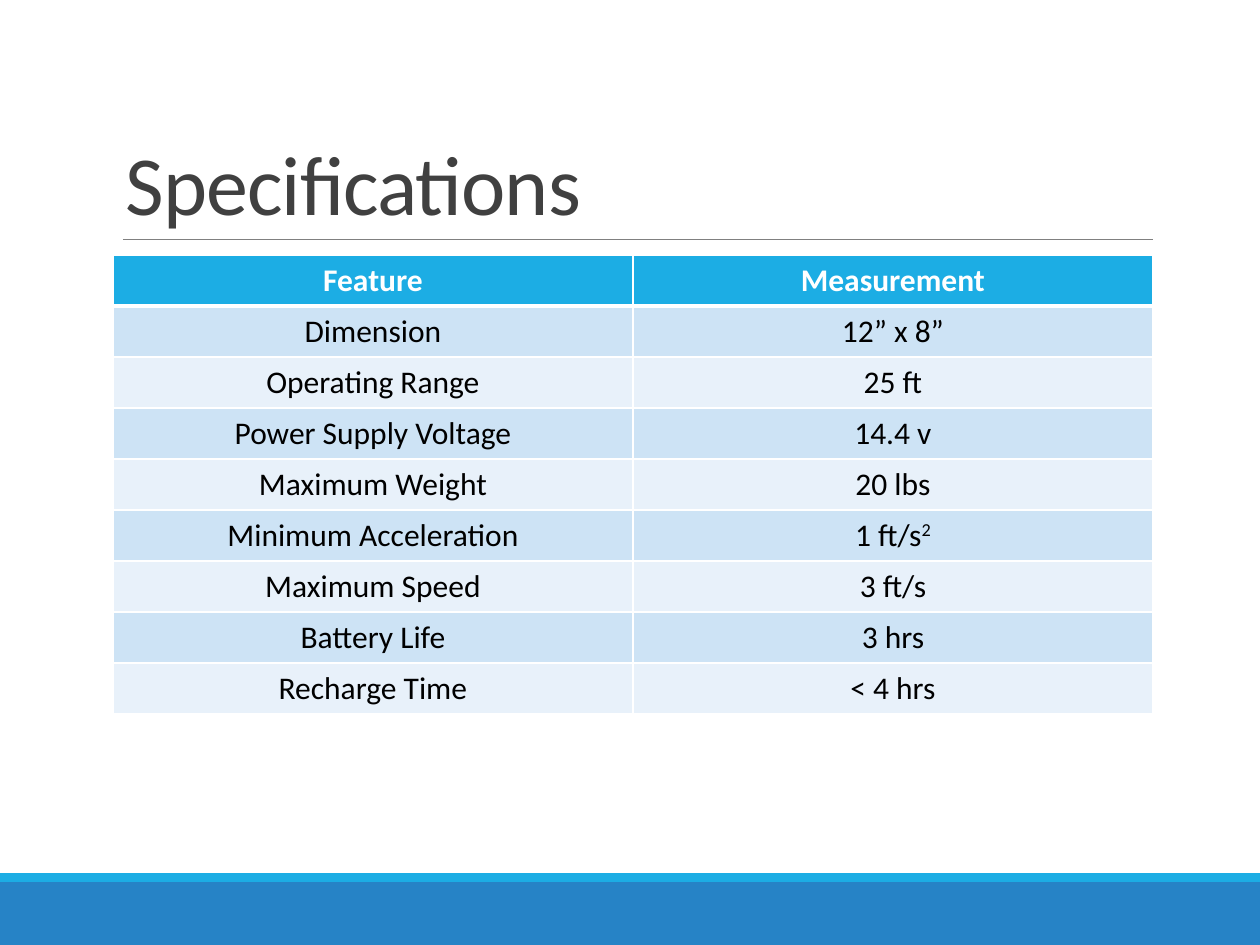
from dataclasses import dataclass

from pptx import Presentation
from pptx.dml.color import RGBColor
from pptx.enum.shapes import MSO_CONNECTOR, MSO_SHAPE
from pptx.enum.text import MSO_ANCHOR, PP_ALIGN
from pptx.oxml.ns import qn
from pptx.util import Emu, Pt
from lxml.etree import SubElement

PX_PER_INCH = 126


@dataclass(frozen=True)
class Theme:
    font: str = "Calibri"
    title_size: int = 48
    table_size: int = 18
    white: str = "FFFFFF"
    black: str = "000000"
    title: str = "404040"
    rule: str = "808080"
    accent: str = "1CADE4"
    footer: str = "2683C6"
    bands: tuple[str, str] = ("CDE3F5", "E8F1FA")


@dataclass(frozen=True)
class Bar:
    top: int
    height: int
    color: str


@dataclass(frozen=True)
class Specification:
    feature: str
    measurement: str
    exponent: str = ""


THEME = Theme()
PAGE_WIDTH, PAGE_HEIGHT = 1260, 945
LEFT, CONTENT_WIDTH = 113, 1040
TABLE_TOP, ROW_HEIGHT = 255, 51

BARS = (Bar(882, 63, THEME.footer), Bar(873, 9, THEME.accent))
HEADER = Specification("Feature", "Measurement")
SPECIFICATIONS = (
    Specification("Dimension", "12” x 8”"),
    Specification("Operating Range", "25 ft"),
    Specification("Power Supply Voltage", "14.4 v"),
    Specification("Maximum Weight", "20 lbs"),
    Specification("Minimum Acceleration", "1 ft/s", "2"),
    Specification("Maximum Speed", "3 ft/s"),
    Specification("Battery Life", "3 hrs"),
    Specification("Recharge Time", "< 4 hrs"),
)


def px(length: int) -> Emu:
    return Emu(round(length * 914400 / PX_PER_INCH))


def rgb(color: str) -> RGBColor:
    return RGBColor.from_string(color)


def add_text(para, text: str, *, size: int, color: str, bold: bool = False,
             spacing: int = 0, baseline: int = 0) -> None:
    """Add a formatted run; spacing is in 1/100 pt, baseline in 1/1000 %."""
    span = para.add_run()
    span.text = text
    span.font.name = THEME.font
    span.font.size = Pt(size)
    span.font.bold = bold
    span.font.color.rgb = rgb(color)
    properties = span._r.get_or_add_rPr()
    if spacing:
        properties.set("spc", str(spacing))
    if baseline:
        properties.set("baseline", str(baseline))


def add_bar(page, bar: Bar) -> None:
    shape = page.shapes.add_shape(MSO_SHAPE.RECTANGLE, 0, px(bar.top),
                                  px(PAGE_WIDTH), px(bar.height))
    shape.shadow.inherit = False
    shape.fill.solid()
    shape.fill.fore_color.rgb = rgb(bar.color)
    shape.line.fill.background()


def add_rule(page, left: int, right: int, top: int) -> None:
    rule = page.shapes.add_connector(MSO_CONNECTOR.STRAIGHT, px(left), px(top),
                                     px(right), px(top))
    rule.line.color.rgb = rgb(THEME.rule)
    rule.line.width = Pt(0.5)
    SubElement(rule._element.spPr, qn("a:effectLst"))


def add_title(page, text: str) -> None:
    box = page.shapes.add_textbox(px(LEFT), px(39), px(CONTENT_WIDTH), px(200))
    frame = box.text_frame
    frame.word_wrap = True
    frame.vertical_anchor = MSO_ANCHOR.BOTTOM
    para = frame.paragraphs[0]
    para.line_spacing = 0.85
    add_text(para, text, size=THEME.title_size, color=THEME.title, spacing=-50)


def set_borders(cell, top: int, bottom: int) -> None:
    properties = cell._tc.get_or_add_tcPr()
    for side, width in (("L", 1), ("R", 1), ("T", top), ("B", bottom)):
        line = SubElement(properties, qn(f"a:ln{side}"), w=str(Pt(width)))
        fill = SubElement(line, qn("a:solidFill"))
        SubElement(fill, qn("a:srgbClr"), val=THEME.white)


def fill_row(cells, row: int, item: Specification) -> None:
    is_header = row == 0
    fill = THEME.accent if is_header else THEME.bands[(row - 1) % 2]
    color = THEME.white if is_header else THEME.black
    for cell, text, exponent in zip(cells, (item.feature, item.measurement),
                                    ("", item.exponent)):
        # Borders come before the fill in the cell properties
        set_borders(cell, top=3 if row == 1 else 1, bottom=3 if is_header else 1)
        cell.fill.solid()
        cell.fill.fore_color.rgb = rgb(fill)
        para = cell.text_frame.paragraphs[0]
        para.alignment = PP_ALIGN.CENTER
        add_text(para, text, size=THEME.table_size, color=color, bold=is_header)
        if exponent:
            add_text(para, exponent, size=THEME.table_size, color=color,
                     baseline=30000)


def add_specification_table(page) -> None:
    items = (HEADER, *SPECIFICATIONS)
    table = page.shapes.add_table(
        len(items), 2, px(LEFT), px(TABLE_TOP), px(CONTENT_WIDTH),
        px(ROW_HEIGHT * len(items))).table
    for row, item in enumerate(items):
        fill_row(table.rows[row].cells, row, item)


def main() -> None:
    deck = Presentation()
    deck.slide_width, deck.slide_height = px(PAGE_WIDTH), px(PAGE_HEIGHT)
    page = deck.slides.add_slide(deck.slide_layouts[6])

    # Footer bars and the rule under the title
    for bar in BARS:
        add_bar(page, bar)
    add_rule(page, 123, LEFT + CONTENT_WIDTH, 239)

    # Title and table
    add_title(page, "Specifications")
    add_specification_table(page)

    deck.save("out.pptx")


if __name__ == "__main__":
    main()
